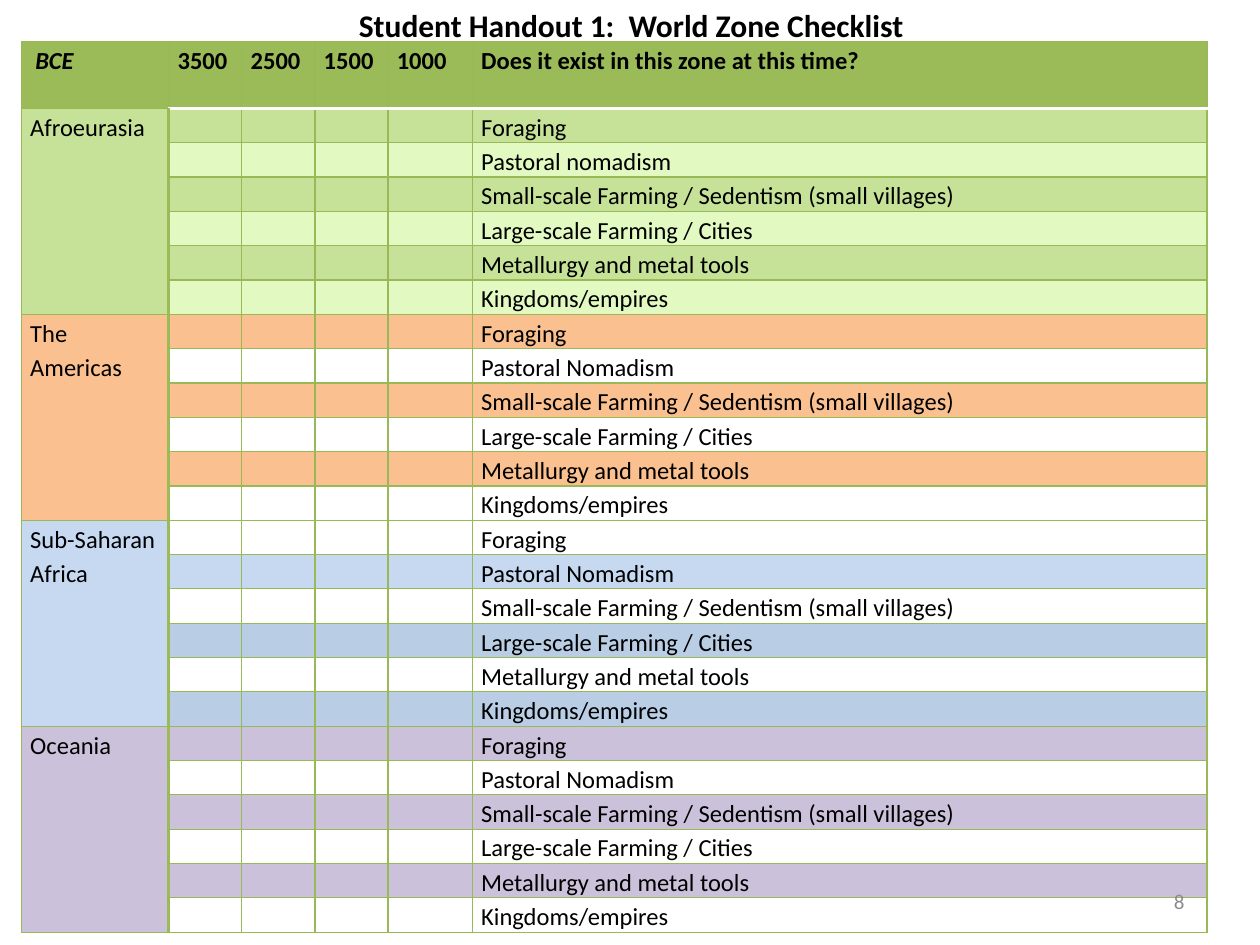
from lxml.etree import SubElement
from pptx import Presentation
from pptx.dml.color import RGBColor
from pptx.enum.text import MSO_ANCHOR, PP_ALIGN
from pptx.oxml.ns import qn
from pptx.util import Inches, Pt

BLACK = RGBColor(0x00, 0x00, 0x00)
WHITE = RGBColor(0xFF, 0xFF, 0xFF)
GRAY = RGBColor(0x8C, 0x8C, 0x8C)
GREEN = RGBColor(0x9B, 0xBB, 0x59)
GRID_GREEN = RGBColor(0x98, 0xB9, 0x55)
MID_GREEN = RGBColor(0xC6, 0xE1, 0x98)
PALE_GREEN = RGBColor(0xE2, 0xFA, 0xC2)
ORANGE = RGBColor(0xFA, 0xC0, 0x90)
PALE_BLUE = RGBColor(0xC6, 0xD9, 0xF1)
BLUE = RGBColor(0xB9, 0xCD, 0xE5)
PURPLE = RGBColor(0xCC, 0xC1, 0xDA)

TITLE = "Student Handout 1:  World Zone Checklist"
PAGE_NUMBER = "8"
HEADINGS = ["BCE", "3500", "2500", "1500", "1000", "Does it exist in this zone at this time?"]
FEATURES = [
    "Foraging",
    "Pastoral Nomadism",
    "Small-scale Farming / Sedentism (small villages)",
    "Large-scale Farming / Cities",
    "Metallurgy and metal tools",
    "Kingdoms/empires",
]
# zone, its label's fill, fills of its feature rows, features
ZONES = [
    ("Afroeurasia", MID_GREEN, [MID_GREEN, PALE_GREEN] * 3,
     [FEATURES[0], "Pastoral nomadism", *FEATURES[2:]]),
    ("The Americas", ORANGE, [ORANGE, WHITE] * 3, FEATURES),
    ("Sub-Saharan Africa", PALE_BLUE, [WHITE, PALE_BLUE, WHITE, BLUE, WHITE, BLUE], FEATURES),
    ("Oceania", PURPLE, [PURPLE, WHITE] * 3, FEATURES),
]

COLUMN_WIDTHS = [1.17, 0.58, 0.58, 0.58, 0.67, 5.83]
HEADER_HEIGHT, ROW_HEIGHT = 0.53, 0.27
TABLE_LEFT, TABLE_TOP = 0.17, 0.33
CELL_INSET = 0.07
TEXT_SIZE = 14
THIN, THICK = 0.75, 2


def write(frame, text, size=TEXT_SIZE, color=BLACK, bold=False, italic=False,
          align=PP_ALIGN.LEFT, spacing=None):
    paragraph = frame.paragraphs[0]
    paragraph.alignment = align
    paragraph.line_spacing = spacing
    if not text:
        # the end mark's size keeps an empty row from growing
        SubElement(paragraph._p, qn("a:endParaRPr"), sz=str(size * 100))
        return
    run = paragraph.add_run()
    run.text = text
    run.font.name = "Calibri"
    run.font.size = Pt(size)
    run.font.color.rgb = color
    run.font.bold = bold
    run.font.italic = italic


def set_borders(cell, **special):
    """Draw thin grid lines, except for sides given as side=(color, points)."""
    properties = cell._tc.get_or_add_tcPr()
    for side in "LRTB":
        color, points = special.get(side, (GRID_GREEN, THIN))
        line = SubElement(properties, qn(f"a:ln{side}"), w=str(Pt(points)))
        fill = SubElement(line, qn("a:solidFill"))
        SubElement(fill, qn("a:srgbClr"), val=str(color))


def fill_cell(cell, text, fill, inset=CELL_INSET, borders=None, **text_format):
    cell.margin_left = Inches(inset)
    cell.margin_right = Inches(CELL_INSET)
    cell.margin_top = cell.margin_bottom = 0
    write(cell.text_frame, text, spacing=1.15, **text_format)
    set_borders(cell, **(borders or {}))
    cell.fill.solid()
    cell.fill.fore_color.rgb = fill


def add_checklist(slide):
    row_count = 1 + sum(len(features) for *_, features in ZONES)
    table = slide.shapes.add_table(
        row_count, len(HEADINGS), Inches(TABLE_LEFT), Inches(TABLE_TOP),
        Inches(sum(COLUMN_WIDTHS)),
        Inches(HEADER_HEIGHT + ROW_HEIGHT * (row_count - 1))).table
    table.first_row = table.horz_banding = False
    for column, width in zip(table.columns, COLUMN_WIDTHS):
        column.width = Inches(width)
    for index, row in enumerate(table.rows):
        row.height = Inches(ROW_HEIGHT if index else HEADER_HEIGHT)

    for index, heading in enumerate(HEADINGS):
        is_era = index == 0
        fill_cell(table.cell(0, index), heading, GREEN, bold=True, italic=is_era,
                  inset=0.11 if is_era else CELL_INSET,
                  borders={} if is_era else {"B": (WHITE, THICK)})

    top = 1
    for zone, zone_fill, row_fills, features in ZONES:
        for offset, (row_fill, feature) in enumerate(zip(row_fills, features)):
            row = top + offset
            fill_cell(table.cell(row, 0), "" if offset else zone, zone_fill,
                      borders={"R": (GREEN, THICK)})
            for column in range(1, len(HEADINGS)):
                borders = {}
                if row == 1:
                    borders["T"] = (WHITE, THICK)
                if column == 1:
                    borders["L"] = (GREEN, THICK)
                is_feature = column == len(HEADINGS) - 1
                fill_cell(table.cell(row, column), feature if is_feature else "",
                          row_fill, borders=borders)
        bottom = top + len(features) - 1
        table.cell(top, 0).merge(table.cell(bottom, 0))
        top = bottom + 1


def add_label(slide, text, left, top, width, height, wrap=True,
              anchor=MSO_ANCHOR.TOP, **text_format):
    box = slide.shapes.add_textbox(Inches(left), Inches(top), Inches(width), Inches(height))
    box.text_frame.word_wrap = wrap
    box.text_frame.vertical_anchor = anchor
    write(box.text_frame, text, **text_format)


def main():
    deck = Presentation()
    deck.slide_width, deck.slide_height = Inches(10), Inches(7.5)
    slide = deck.slides.add_slide(deck.slide_layouts[6])
    add_checklist(slide)
    add_label(slide, PAGE_NUMBER, 7.17, 6.95, 2.33, 0.4, anchor=MSO_ANCHOR.MIDDLE,
              size=12, color=GRAY, align=PP_ALIGN.RIGHT)
    add_label(slide, TITLE, 2.75, 0, 4.56, 0.4, wrap=False, size=18, bold=True)
    deck.save("out.pptx")


if __name__ == "__main__":
    main()
